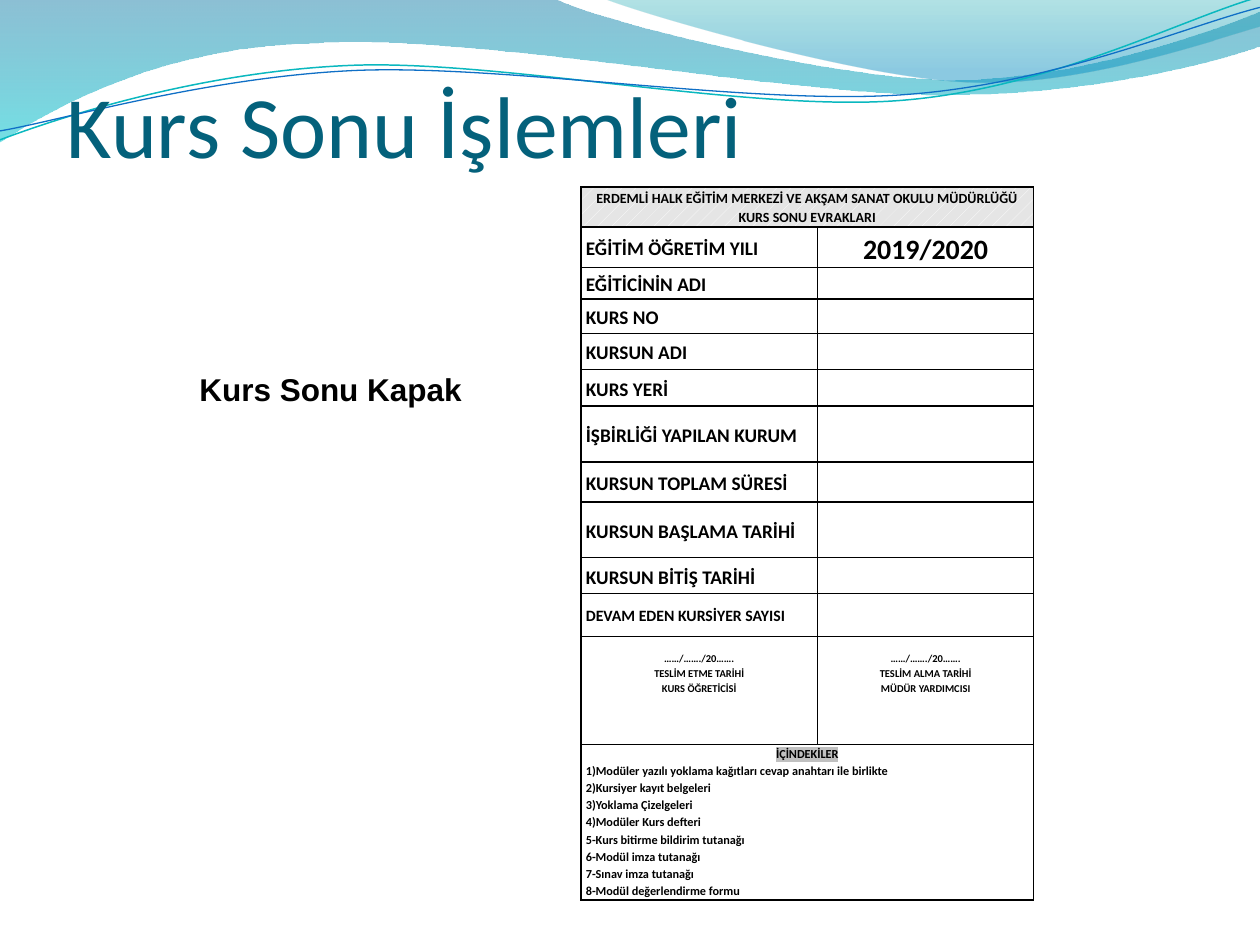
from lxml import etree
from pptx import Presentation
from pptx.dml.color import RGBColor
from pptx.enum import dml, text
from pptx.oxml.ns import qn
from pptx.util import Cm, Pt

COLORS = {
    "title": "04617B", "ink": "000000", "white": "FFFFFF",
    "header": "E5E5E5", "highlight": "C0C0C0",
    "teal": "0AB8BF", "blue": "0F6FC6",
    "deep": "0074A1", "aqua": "00C6CF", "sea": "00A1A9", "sky": "008BBF",
}

# Waves in cm: a start, then segments of one point (line) or three (curve);
# gradient stops are position, colour, opacity in percent
WAVES = [
    ((0, 0), [
        [(11.18, -0.03)],
        [(12.09, 0.43), (16.87, 1.6), (19.25, 1.6)],
        [(21.67, 1.6), (24.33, 0.66), (25.4, 0.23)],
        [(25.43, 0.91)],
        [(24.97, 1.12), (22.1, 1.93), (18.95, 1.91)],
        [(15.8, 1.91), (9.7, 0.71), (6.53, 0.86)],
        [(3.28, 0.91), (1.17, 2.11), (-0.03, 2.87)],
        [(0, 0)],
    ], [(0, "deep", 45), (1, "aqua", 55)]),
    ((12.17, -0.03), [
        [(12.93, 0.28), (17.32, 1.57), (19.53, 1.65)],
        [(21.74, 1.75), (24.41, 0.81), (25.4, 0.53)],
        [(25.4, 0)],
        [(12.17, -0.03)],
    ], [(0, "sea", 30), (0.8, "sky", 45)]),
]
RIBBONS = [
    ((0, 2.82), [
        [(1.22, 2.36), (4.01, 1.45), (7.04, 1.32)],
        [(10.03, 1.19), (15.06, 2.26), (18.11, 2.03)],
        [(21.16, 1.8), (23.83, 0.38), (25.35, -0.05)],
    ], "teal", 0.85),
    ((0, 2.64), [
        [(1.19, 2.44), (4.17, 1.55), (7.19, 1.42)],
        [(10.24, 1.3), (15.16, 2.13), (18.21, 1.91)],
        [(21.23, 1.7), (23.9, 0.53), (25.4, 0.15)],
    ], "blue", 0.75),
]

TITLE = "Kurs Sonu İşlemleri"
CAPTION = "Kurs Sonu Kapak"
HEADER = "ERDEMLİ HALK EĞİTİM MERKEZİ VE AKŞAM SANAT OKULU MÜDÜRLÜĞÜ KURS SONU EVRAKLARI"
# Label, label size, value, row height in cm
FIELDS = [
    ("EĞİTİM ÖĞRETİM YILI", 11, "2019/2020", 0.81),
    ("EĞİTİCİNİN ADI", 11, "", 0.64),
    ("KURS NO", 11, "", 0.69),
    ("KURSUN ADI", 11, "", 0.73),
    ("KURS YERİ", 11, "", 0.74),
    ("İŞBİRLİĞİ YAPILAN KURUM", 11, "", 1.12),
    ("KURSUN TOPLAM SÜRESİ", 11, "", 0.81),
    ("KURSUN BAŞLAMA TARİHİ", 11, "", 1.12),
    ("KURSUN BİTİŞ TARİHİ", 11, "", 0.73),
    ("DEVAM EDEN KURSİYER SAYISI", 9, "", 0.86),
]
SIGNATURES = [
    ["……/……./20…….", "TESLİM ETME TARİHİ", "KURS ÖĞRETİCİSİ"],
    ["……/……./20…….", "TESLİM ALMA TARİHİ", "MÜDÜR YARDIMCISI"],
]
CONTENTS = [
    "İÇİNDEKİLER",
    "1)Modüler yazılı yoklama kağıtları cevap anahtarı ile birlikte",
    "2)Kursiyer kayıt belgeleri",
    "3)Yoklama Çizelgeleri",
    "4)Modüler Kurs defteri",
    "5-Kurs bitirme bildirim tutanağı",
    "6-Modül imza tutanağı",
    "7-Sınav imza tutanağı",
    "8-Modül değerlendirme formu",
]
COLUMNS = [4.77, 4.36]
HEIGHTS = [0.81, *(field[3] for field in FIELDS), 2.18, 3.13]
LEFT, CENTER = text.PP_ALIGN.LEFT, text.PP_ALIGN.CENTER
TOP, MIDDLE = text.MSO_ANCHOR.TOP, text.MSO_ANCHOR.MIDDLE


def color(name):
    return RGBColor.from_string(COLORS[name])


def add_outline(page, start, segments, close):
    builder = page.shapes.build_freeform(Cm(start[0]), Cm(start[1]))
    points = [point for segment in segments for point in segment]
    builder.add_line_segments([(Cm(x), Cm(y)) for x, y in points], close=close)
    shape = builder.convert_to_shape()
    shape.shadow.inherit = False
    # Join each three-point segment into one cubic curve
    steps = iter(list(shape._element.iter(qn("a:lnTo"))))
    for segment in segments:
        group = [next(steps) for _ in segment]
        if len(group) == 3:
            curve = etree.Element(qn("a:cubicBezTo"))
            group[0].addprevious(curve)
            for step in group:
                curve.append(step[0])
                step.getparent().remove(step)
    return shape


def style(para, size, name, ink="ink", bold=True):
    para.font.size, para.font.name, para.font.bold = Pt(size), name, bold
    para.font.color.rgb = color(ink)


def add_text(page, content, place, size, name, ink, bold):
    box = page.shapes.add_textbox(*map(Cm, place))
    para = box.text_frame.paragraphs[0]
    para.text = content
    style(para, size, name, ink, bold)
    return box.text_frame


def add_borders(cell):
    props = cell._tc.get_or_add_tcPr()
    for index, side in enumerate(("lnL", "lnR", "lnT", "lnB")):
        line = etree.Element(qn(f"a:{side}"), w=str(Pt(1)))
        fill = etree.SubElement(line, qn("a:solidFill"))
        etree.SubElement(fill, qn("a:srgbClr"), val=COLORS["ink"])
        props.insert(index, line)


def fill_cell(cell, lines, size, align=LEFT, anchor=TOP, top=0):
    cell.margin_left = cell.margin_right = Cm(0.1)
    cell.margin_top, cell.margin_bottom = Cm(top), 0
    cell.vertical_anchor = anchor
    cell.text = "\n".join(lines)
    for para in cell.text_frame.paragraphs:
        para.alignment, para.line_spacing = align, 1.15
        style(para, size, "Calibri")


deck = Presentation()
deck.slide_width, deck.slide_height = Cm(25.4), Cm(19.05)
page = deck.slides.add_slide(deck.slide_layouts[6])

# Waves and ribbons along the top
for start, segments, stops in WAVES:
    wave = add_outline(page, start, segments, True)
    wave.line.fill.background()
    wave.fill.gradient()
    wave.fill.gradient_angle = 270
    for stop, (position, shade, _) in zip(wave.fill.gradient_stops, stops):
        stop.position, stop.color.rgb = position, color(shade)
    shades = list(wave._element.spPr.iter(qn("a:srgbClr")))
    for shade, (_, _, opacity) in zip(shades, stops):
        etree.SubElement(shade, qn("a:alpha"), val=str(opacity * 1000))
for start, segments, ink, width in RIBBONS:
    ribbon = add_outline(page, start, segments, False)
    ribbon.fill.background()
    ribbon.line.color.rgb, ribbon.line.width = color(ink), Pt(width)

# Title and caption
title = add_text(page, TITLE, (1.35, 1, 22.86, 2.54), 50, "Calibri", "title", False)
title.word_wrap, title.vertical_anchor = True, text.MSO_ANCHOR.BOTTOM
title.margin_left = title.margin_right = title.margin_bottom = 0
caption = add_text(page, CAPTION, (3.77, 7.34, 5.87, 1.02), 18, "Arial", "ink", True)
caption.word_wrap = False

# Cover form
form = page.shapes.add_table(len(HEIGHTS), len(COLUMNS), Cm(11.71), Cm(3.77),
                             Cm(sum(COLUMNS)), Cm(sum(HEIGHTS))).table
form.first_row = form.horz_banding = False
for column, width in zip(form.columns, COLUMNS):
    column.width = Cm(width)
for row, height in zip(form.rows, HEIGHTS):
    row.height = Cm(height)
for cell in form.iter_cells():
    cell.fill.background()
    add_borders(cell)

last = len(HEIGHTS) - 1
for row in (0, last):
    form.cell(row, 0).merge(form.cell(row, 1))

header = form.cell(0, 0)
fill_cell(header, [HEADER], 8, CENTER)
header.fill.patterned()
header.fill.pattern = dml.MSO_PATTERN.PERCENT_10
header.fill.fore_color.rgb, header.fill.back_color.rgb = color("white"), color("header")

for row, (label, size, value, _) in enumerate(FIELDS, 1):
    fill_cell(form.cell(row, 0), [label], size, LEFT, MIDDLE)
    fill_cell(form.cell(row, 1), [value], 16 if value else 11, CENTER, MIDDLE)
for column, lines in enumerate(SIGNATURES):
    fill_cell(form.cell(last - 1, column), lines, 6, CENTER, TOP, 0.29)

fill_cell(form.cell(last, 0), CONTENTS, 7)
heading = form.cell(last, 0).text_frame.paragraphs[0]
heading.alignment = CENTER
mark = etree.SubElement(heading.runs[0].font._element, qn("a:highlight"))
etree.SubElement(mark, qn("a:srgbClr"), val=COLORS["highlight"])

deck.save("out.pptx")
